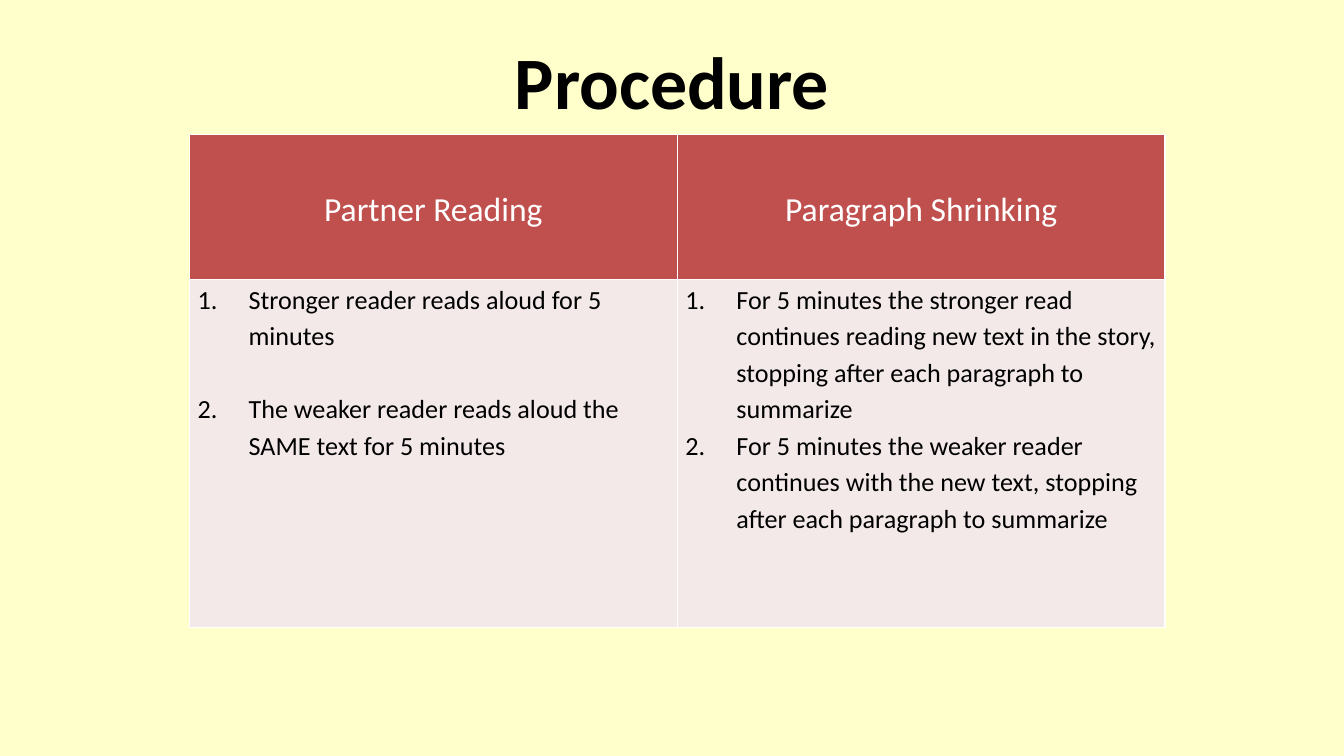
from dataclasses import dataclass

from lxml import etree
from pptx import Presentation
from pptx.dml.color import RGBColor
from pptx.enum import text
from pptx.oxml.ns import qn
from pptx.slide import Slide
from pptx.table import Table, _Cell
from pptx.text.text import _Paragraph
from pptx.util import Inches, Pt


@dataclass(frozen=True)
class Theme:
    font: str = "Calibri"
    background: str = "FFFFCC"
    header: str = "C0504D"
    body: str = "F4E9E9"
    light: str = "FFFFFF"
    dark: str = "000000"
    title_size: float = 39.6
    header_size: float = 18
    body_size: float = 14
    line_spacing: float = 1.15
    border: float = 1


@dataclass(frozen=True)
class Activity:
    name: str
    steps: tuple[str, ...]
    step_gap: float = 0


THEME = Theme()
ACTIVITIES = (
    Activity(
        "Partner Reading",
        (
            "Stronger reader reads aloud for 5 minutes",
            "The weaker reader reads aloud the SAME text for 5 minutes",
        ),
        step_gap=19.65,
    ),
    Activity(
        "Paragraph Shrinking",
        (
            "For 5 minutes the stronger read continues reading new text in the story, "
            "stopping after each paragraph to summarize",
            "For 5 minutes the weaker reader continues with the new text, "
            "stopping after each paragraph to summarize",
        ),
    ),
)


def add_run(p: _Paragraph, content: str, size: float, color: str, bold: bool = False) -> None:
    r = p.add_run()
    r.text = content
    r.font.name = THEME.font
    r.font.size = Pt(size)
    r.font.bold = bold
    r.font.color.rgb = RGBColor.from_string(color)


def add_borders(cell: _Cell) -> None:
    tc_pr = cell._tc.get_or_add_tcPr()
    for index, side in enumerate(("lnL", "lnR", "lnT", "lnB")):
        line = etree.Element(qn(f"a:{side}"), w=str(Pt(THEME.border)))
        fill = etree.SubElement(line, qn("a:solidFill"))
        etree.SubElement(fill, qn("a:srgbClr"), val=THEME.light)
        tc_pr.insert(index, line)


def format_cell(cell: _Cell, fill: str, anchor: text.MSO_ANCHOR) -> None:
    cell.fill.solid()
    cell.fill.fore_color.rgb = RGBColor.from_string(fill)
    cell.vertical_anchor = anchor
    cell.margin_left = cell.margin_right = Inches(0.06)
    cell.margin_top = cell.margin_bottom = 0
    add_borders(cell)


def number_paragraph(p: _Paragraph) -> None:
    p_pr = p._p.get_or_add_pPr()
    p_pr.set("marL", str(Inches(0.38)))
    p_pr.set("indent", str(Inches(-0.38)))
    etree.SubElement(p_pr, qn("a:buFont"), typeface=THEME.font)
    etree.SubElement(p_pr, qn("a:buAutoNum"), type="arabicPeriod")


def fill_header(cell: _Cell, activity: Activity) -> None:
    format_cell(cell, THEME.header, text.MSO_ANCHOR.MIDDLE)
    p = cell.text_frame.paragraphs[0]
    p.alignment = text.PP_ALIGN.CENTER
    p.line_spacing = THEME.line_spacing
    add_run(p, activity.name, THEME.header_size, THEME.light)


def fill_steps(cell: _Cell, activity: Activity) -> None:
    format_cell(cell, THEME.body, text.MSO_ANCHOR.TOP)
    tf = cell.text_frame
    for index, step in enumerate(activity.steps):
        p = tf.add_paragraph() if index else tf.paragraphs[0]
        number_paragraph(p)
        p.line_spacing = THEME.line_spacing
        p.space_before = Pt(activity.step_gap if index else 0)
        add_run(p, step, THEME.body_size, THEME.dark)


def add_title(s: Slide, content: str) -> None:
    title = s.shapes.title
    title.left, title.top = Inches(1.81), Inches(0.25)
    title.width, title.height = Inches(6.38), Inches(0.69)
    tf = title.text_frame
    tf.auto_size = text.MSO_AUTO_SIZE.NONE
    tf.vertical_anchor = text.MSO_ANCHOR.MIDDLE
    p = tf.paragraphs[0]
    p.alignment = text.PP_ALIGN.CENTER
    add_run(p, content, THEME.title_size, THEME.dark, bold=True)


def add_activity_table(s: Slide, activities: tuple[Activity, ...]) -> Table:
    frame = s.shapes.add_table(
        2, len(activities), Inches(1.41), Inches(1), Inches(7.26), Inches(3.67)
    )
    table = frame.table
    table.horz_banding = False
    table.first_row = True
    table.rows[0].height = Inches(1.08)
    table.rows[1].height = Inches(2.59)
    for column, activity in enumerate(activities):
        table.columns[column].width = Inches(3.63)
        fill_header(table.cell(0, column), activity)
        fill_steps(table.cell(1, column), activity)
    return table


def main() -> None:
    prs = Presentation()
    prs.slide_width = Inches(10)
    prs.slide_height = Inches(10 * 9 / 16)
    s = prs.slides.add_slide(prs.slide_layouts[5])
    s.background.fill.solid()
    s.background.fill.fore_color.rgb = RGBColor.from_string(THEME.background)
    add_title(s, "Procedure")
    add_activity_table(s, ACTIVITIES)
    prs.save("out.pptx")


if __name__ == "__main__":
    main()
